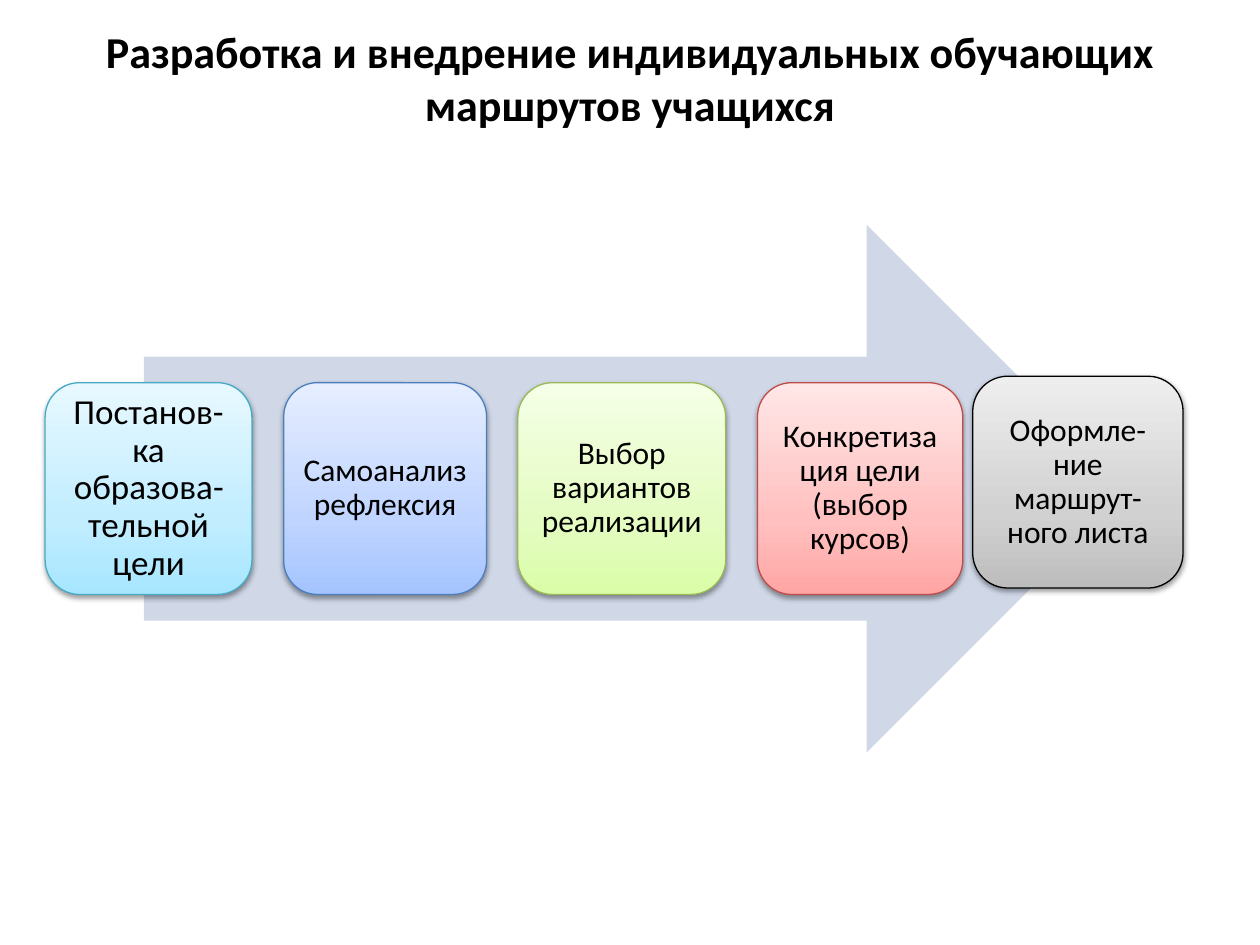
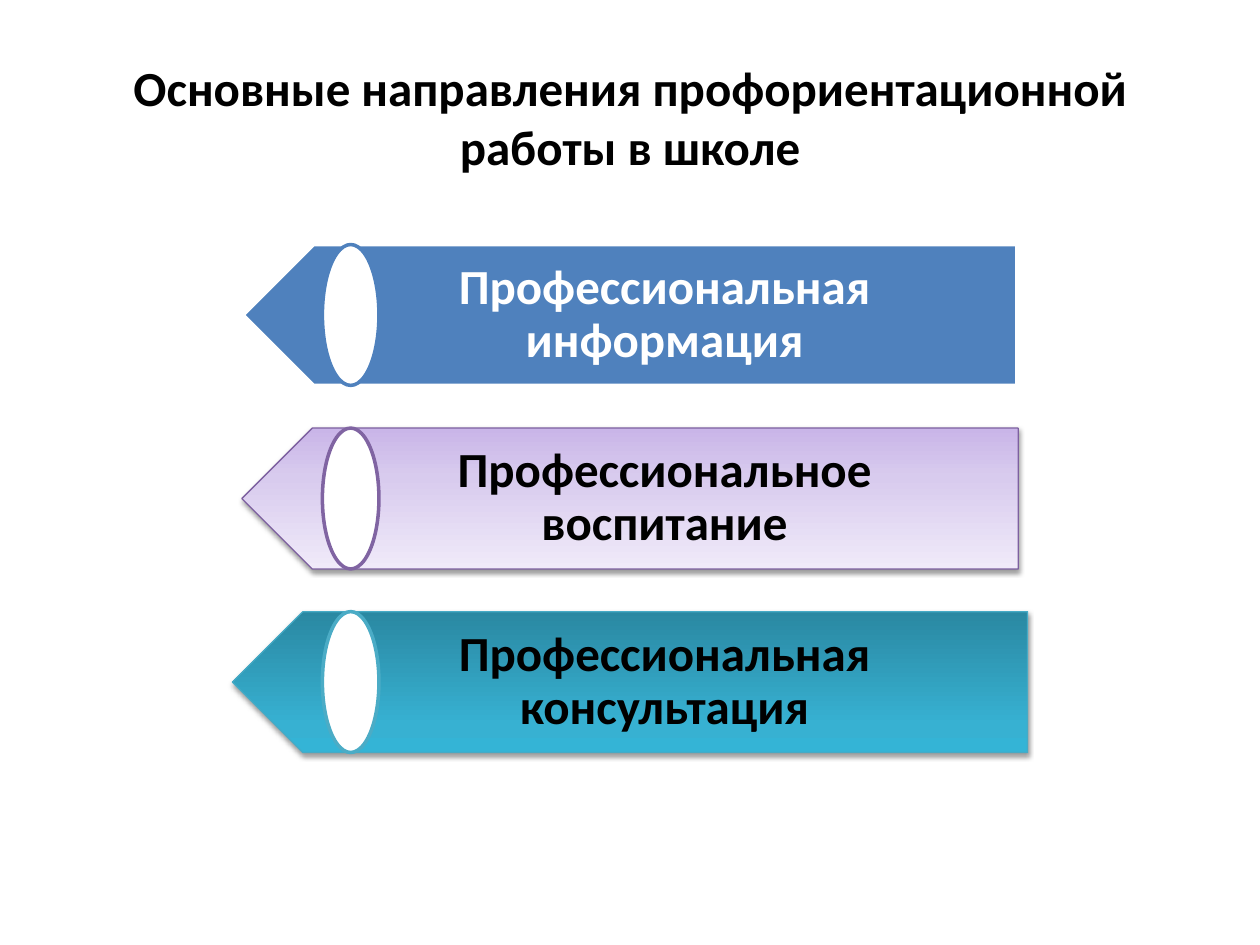
import lxml.etree
import pptx
import pptx.dml.color
import pptx.enum.shapes
import pptx.enum.text
import pptx.oxml.ns
import pptx.util

Cm = pptx.util.Cm
Pt = pptx.util.Pt
SHAPE = pptx.enum.shapes.MSO_SHAPE
ANCHOR = pptx.enum.text.MSO_ANCHOR
qn = pptx.oxml.ns.qn

FONT = "Calibri"
COLORS = {
    "ink": "000000",
    "paper": "FFFFFF",
    "arrow": "D0D8E8",
    "blue": "4F81BD",
    "violet": "8064A2",
    "aqua": "4BACC6",
    "sky edge": "46AAC5",
    "blue edge": "4B7EBC",
    "green edge": "98B955",
    "red edge": "BF4C48",
    "violet edge": "7D60A0",
}
# Stops as (percent, colour), running from the bottom up
BLENDS = {
    "sky": [(0, "A7E6FF"), (35, "C1EDFF"), (100, "E7F8FF")],
    "blue": [(0, "A4C4FF"), (35, "BFD4FF"), (100, "E6EEFF")],
    "green": [(0, "DAFDA7"), (35, "E4FCC2"), (100, "F5FFE7")],
    "red": [(0, "FFA6A5"), (35, "FFC0BF"), (100, "FFE7E7")],
    "gray": [(0, "BDBDBD"), (35, "D1D1D1"), (100, "EEEEEE")],
    "violet": [(0, "C9B5E8"), (35, "D8CBEE"), (100, "F0EAF9")],
    "teal": [(0, "2A88A2"), (80, "37B1D2"), (100, "34B4D6")],
}
# Text, left, width, rise above the row, font size, blend, edge
STEPS = [
    ("Постанов-ка образова-тельной цели", 0.91, 4.17, 0, 20, "sky", "sky edge"),
    ("Самоанализ рефлексия", 5.72, 4.09, 0, 18, "blue", "blue edge"),
    ("Выбор вариантов реализации", 10.44, 4.19, 0, 18, "green", "green edge"),
    ("Конкретизация цели (выбор курсов)", 15.27, 4.14, 0, 18, "red", "red edge"),
    ("Оформле-ние маршрут-ного листа", 19.61, 4.24, 0.13, 18, "gray", "ink"),
]
# Text, width, text colour, blend, edge, edge width, ring
BANDS = [
    ("Профессиональная информация", 15.6, "paper", None, "paper", 2, "blue"),
    ("Профессиональное воспитание", 15.65, "ink", "violet", "violet edge", 0.75, "violet"),
    ("Профессиональная консультация", 16.03, "ink", "teal", "sky edge", 0.75, "aqua"),
]


def rgb(name):
    return pptx.dml.color.RGBColor.from_string(COLORS[name])


def add_stop(parent, color, **attrs):
    """Append an a:srgbClr to parent and return it."""
    return lxml.etree.SubElement(parent, qn("a:srgbClr"), val=color, **attrs)


def blend_fill(shape, stops):
    shape.fill.gradient()
    shape.fill.gradient_angle = 90
    rows = shape.element.spPr.find(qn("a:gradFill")).find(qn("a:gsLst"))
    for old in list(rows):
        rows.remove(old)
    for part, color in stops:
        stop = lxml.etree.SubElement(rows, qn("a:gs"), pos=str(part * 1000))
        add_stop(stop, color)


def drop_shadow(shape):
    effects = shape.element.spPr.find(qn("a:effectLst"))
    shade = lxml.etree.SubElement(
        effects, qn("a:outerShdw"), blurRad=str(Pt(3.1)), dist=str(Pt(1.6)),
        dir="5400000", rotWithShape="0")
    tint = add_stop(shade, COLORS["ink"])
    lxml.etree.SubElement(tint, qn("a:alpha"), val="38000")


def add_form(slide, kind, box, fill=None, blend=None, edge=None, width=0.75):
    """Add a preset shape; a blended one also casts a shadow."""
    shape = slide.shapes.add_shape(kind, *map(Cm, box))
    if edge:
        shape.line.color.rgb = rgb(edge)
        shape.line.width = Pt(width)
    else:
        shape.line.fill.background()
    shape.shadow.inherit = False
    if blend:
        blend_fill(shape, BLENDS[blend])
        drop_shadow(shape)
    else:
        shape.fill.solid()
        shape.fill.fore_color.rgb = rgb(fill)
    return shape


def set_text(frame, text, size, color="ink", bold=False):
    frame.text = text
    frame.word_wrap = True
    frame.vertical_anchor = ANCHOR.MIDDLE
    para = frame.paragraphs[0]
    para.alignment = pptx.enum.text.PP_ALIGN.CENTER
    para.font.name = FONT
    para.font.size = Pt(size)
    para.font.bold = bold
    para.font.color.rgb = rgb(color)
    return para


def add_label(slide, box, insets, text, size, color="ink", bold=False):
    """Add centred text; insets run left, top, right, bottom."""
    frame = slide.shapes.add_textbox(*map(Cm, box)).text_frame
    set_text(frame, text, size, color, bold).line_spacing = 0.9
    (frame.margin_left, frame.margin_top,
     frame.margin_right, frame.margin_bottom) = map(Cm, insets)


def add_slide(deck, title, size, top):
    slide = deck.slides.add_slide(deck.slide_layouts[5])
    head = slide.shapes.title
    head.left, head.top, head.width, head.height = map(Cm, (1.27, top, 22.86, 3.18))
    set_text(head.text_frame, title, size, bold=True)
    head.text_frame.auto_size = pptx.enum.text.MSO_AUTO_SIZE.NONE
    return slide


def draw_step(slide, box, text, size, blend, edge):
    left, top, width, height = box
    add_form(slide, SHAPE.ROUNDED_RECTANGLE, box, blend=blend, edge=edge)
    pad = 0.2
    inner = (left + pad, top + pad, width - 2 * pad, height - 2 * pad)
    add_label(slide, inner, [size / 100] * 4, text, size)


def draw_route(slide, box):
    """Draw the big arrow in box and the row of steps across its middle."""
    left, top, width, height = box
    add_form(slide, SHAPE.RIGHT_ARROW, box, fill="arrow")
    tall = 4.27
    row = top + (height - tall) / 2
    for text, start, wide, rise, size, blend, edge in STEPS:
        draw_step(slide, (start, row - rise, wide, tall), text, size, blend, edge)


def draw_band(slide, box, text, color, blend, edge, line, ring):
    left, top, width, height = box
    plate = add_form(slide, SHAPE.PENTAGON, box, "blue", blend, edge, line)
    plate.rotation = 180
    nose = height / 4
    add_label(slide, (left + nose, top, width - nose, height),
              (1.24, 0.3, 0.56, 0.3), text, 28, color, True)
    add_form(slide, SHAPE.OVAL, (6.5, top, 1.14, height), "paper", edge=ring, width=2)


def draw_bands(slide, middle, top, height, pitch):
    for index, (text, width, *style) in enumerate(BANDS):
        box = (middle - width / 2, top + index * pitch, width, height)
        draw_band(slide, box, text, *style)


def main():
    deck = pptx.Presentation()
    deck.slide_width, deck.slide_height = Cm(25.4), Cm(19.05)

    route = add_slide(
        deck, "Разработка и внедрение индивидуальных обучающих маршрутов учащихся",
        25.2, 0.5)
    frame = route.shapes.title.text_frame
    frame.vertical_anchor = ANCHOR.TOP
    frame.margin_top = 0
    draw_route(route, (2.9, 4.53, 19.89, 10.64))

    work = add_slide(
        deck, "Основные направления профориентационной работы в школе", 28, 0.76)
    draw_bands(work, middle=12.7, top=4.93, height=2.84, pitch=3.7)

    deck.save("out.pptx")


if __name__ == "__main__":
    main()
